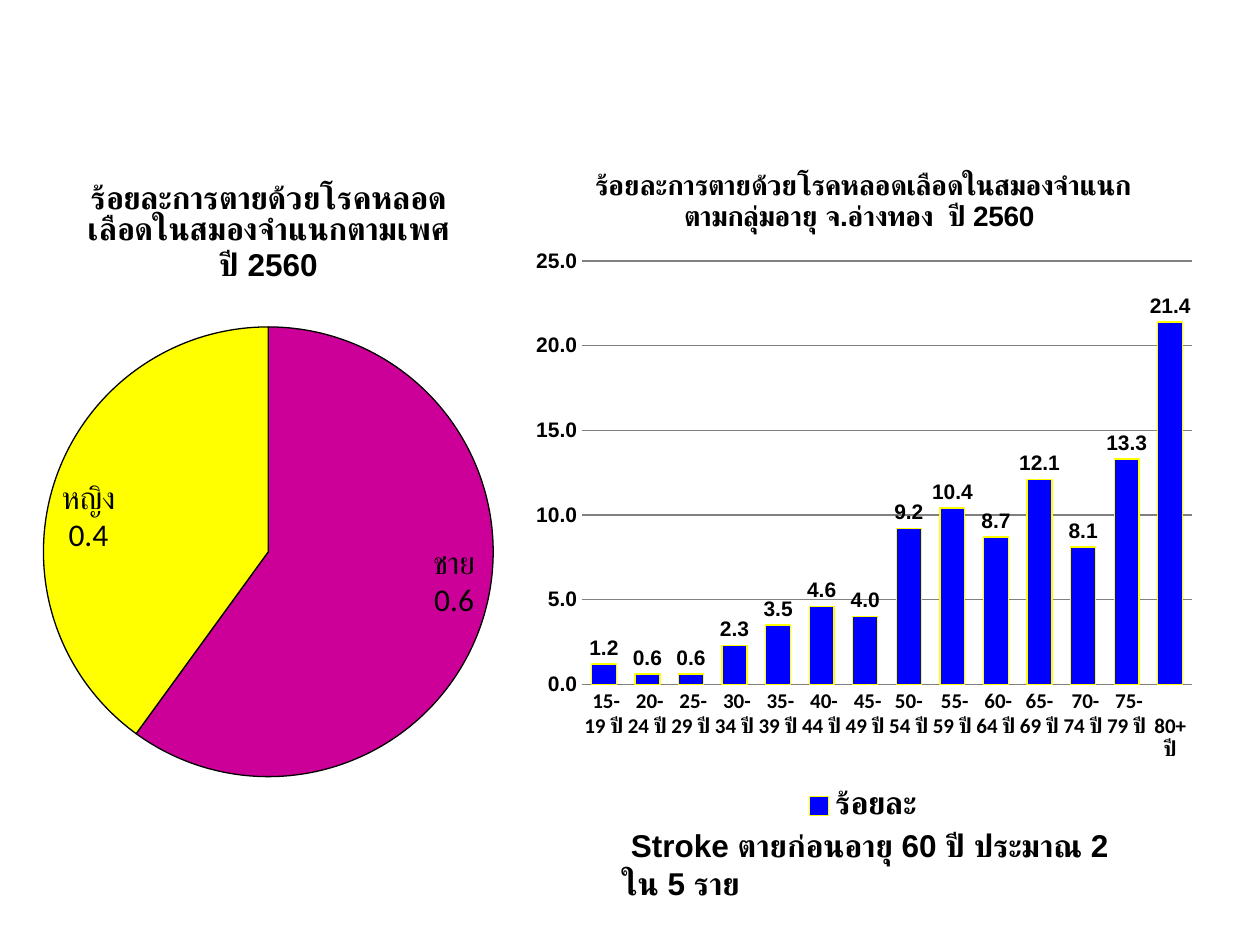
from lxml import etree
from pptx import Presentation
from pptx.chart.data import CategoryChartData
from pptx.dml.color import RGBColor
from pptx.enum.chart import (XL_CHART_TYPE, XL_LABEL_POSITION,
                             XL_LEGEND_POSITION, XL_TICK_MARK)
from pptx.enum.text import MSO_AUTO_SIZE
from pptx.oxml.ns import qn
from pptx.util import Pt

PIE = XL_CHART_TYPE.PIE
COLUMN = XL_CHART_TYPE.COLUMN_CLUSTERED
IN_END = XL_LABEL_POSITION.INSIDE_END
OUT_END = XL_LABEL_POSITION.OUTSIDE_END
BOTTOM = XL_LEGEND_POSITION.BOTTOM
NO_TICK = XL_TICK_MARK.NONE
GROW = MSO_AUTO_SIZE.SHAPE_TO_FIT_TEXT

BLACK = RGBColor(0, 0, 0)
GRAY = RGBColor(0x80, 0x80, 0x80)
PINK = RGBColor(0xCC, 0x00, 0x99)
YELLOW = RGBColor(0xFF, 0xFF, 0x00)
BLUE = RGBColor(0, 0, 0xFF)

SEXES = {"ชาย": 60, "หญิง": 40}
AGES = {
    " 15-19 ปี": 1.2, " 20-24 ปี": 0.6, " 25-29 ปี": 0.6,
    " 30-34 ปี": 2.3, " 35-39 ปี": 3.5, " 40-44 ปี": 4.6,
    " 45-49 ปี": 4.0, "50-54 ปี": 9.2, " 55-59 ปี": 10.4,
    " 60-64 ปี": 8.7, "65-69 ปี": 12.1, " 70-74 ปี": 8.1,
    " 75-79 ปี": 13.3, " 80+ปี": 21.4,
}


def style(font, size, bold=True, name="Arial"):
    font.size = Pt(size)
    font.bold = bold
    font.name = name
    font.color.rgb = BLACK


def paint(part, fill, edge):
    part.format.fill.solid()
    part.format.fill.fore_color.rgb = fill
    part.format.line.color.rgb = edge
    part.format.line.width = Pt(0.75)


def place_plot(chart, *box):
    area = chart.element.find(".//" + qn("c:plotArea"))
    for old in area.findall(qn("c:layout")):
        area.remove(old)
    layout = etree.Element(qn("c:layout"))
    manual = etree.SubElement(layout, qn("c:manualLayout"))
    items = [("layoutTarget", "inner"), ("xMode", "edge"), ("yMode", "edge")]
    for tag, val in items + list(zip("xywh", box)):
        etree.SubElement(manual, qn("c:" + tag)).set("val", str(val))
    area.insert(0, layout)


def add_chart(slide, kind, box, title, size, name, values):
    data = CategoryChartData()
    data.categories = values.keys()
    data.add_series(name, values.values())
    frame = slide.shapes.add_chart(kind, *map(Pt, box), data)
    chart = frame.chart
    style(chart.font, 18, False, "Calibri")
    chart.has_title = True
    para = chart.chart_title.text_frame.paragraphs[0]
    para.text = title
    style(para.font, size)
    chart.chart_title.include_in_layout = False
    chart.has_legend = False
    return chart


def add_labels(plot, form, spot):
    plot.has_data_labels = True
    labels = plot.data_labels
    labels.number_format = form
    labels.number_format_is_linked = False
    labels.position = spot
    return labels


def add_pie(slide):
    chart = add_chart(
        slide, PIE, (14.4, 88.56, 277.92, 378),
        "ร้อยละการตายด้วยโรคหลอดเลือดในสมองจำแนกตามเพศ ปี 2560",
        18, "Series 1", SEXES)
    place_plot(chart, 0.035, 0.26, 0.93, 0.68)
    plot = chart.plots[0]
    for i, color in enumerate((PINK, YELLOW)):
        paint(plot.series[0].points[i], color, BLACK)
    labels = add_labels(plot, "#,##0.0", IN_END)
    labels.show_value = False
    labels.show_percentage = True
    labels.show_category_name = True
    style(labels.font, 18, False, "Calibri")
    split = etree.Element(qn("c:separator"))
    split.text = "\n"
    plot._element.find(".//" + qn("c:showBubbleSize")).addnext(split)


def add_columns(slide):
    chart = add_chart(
        slide, COLUMN, (297.36, 82.8, 391.68, 390.24),
        "ร้อยละการตายด้วยโรคหลอดเลือดในสมองจำแนกตามกลุ่มอายุ จ.อ่างทอง  ปี 2560 ",
        16, "ร้อยละ", AGES)
    place_plot(chart, 0.09, 0.17, 0.89, 0.62)
    plot = chart.plots[0]
    plot.gap_width = 75
    plot.vary_by_categories = False
    paint(plot.series[0], BLUE, YELLOW)
    labels = add_labels(plot, "0.0", OUT_END)
    labels.show_value = True
    style(labels.font, 12)
    for axis, font in ((chart.category_axis, "Calibri"),
                       (chart.value_axis, "Arial")):
        axis.major_tick_mark = axis.minor_tick_mark = NO_TICK
        style(axis.tick_labels.font, 12, name=font)
    chart.category_axis.format.line.color.rgb = GRAY
    scale = chart.value_axis
    scale.minimum_scale, scale.maximum_scale, scale.major_unit = 0, 25, 5
    scale.format.line.fill.background()
    scale.major_gridlines.format.line.color.rgb = GRAY
    scale.tick_labels.number_format = "0.0"
    scale.tick_labels.number_format_is_linked = False
    chart.has_legend = True
    chart.legend.position = BOTTOM
    chart.legend.include_in_layout = False
    style(chart.legend.font, 18)


def add_text(slide, box, text):
    frame = slide.shapes.add_textbox(*map(Pt, box)).text_frame
    frame.word_wrap = True
    frame.auto_size = GROW
    para = frame.paragraphs[0]
    para.text = text
    style(para.font, 18)


def main():
    deck = Presentation()
    deck.slide_width, deck.slide_height = Pt(720), Pt(540)
    slide = deck.slides.add_slide(deck.slide_layouts[6])
    add_pie(slide)
    add_columns(slide)
    add_text(slide, (348.48, 468.72, 300.24, 28.8),
             " Stroke ตายก่อนอายุ 60 ปี ประมาณ 2 ใน 5 ราย")
    deck.save("out.pptx")


if __name__ == "__main__":
    main()
